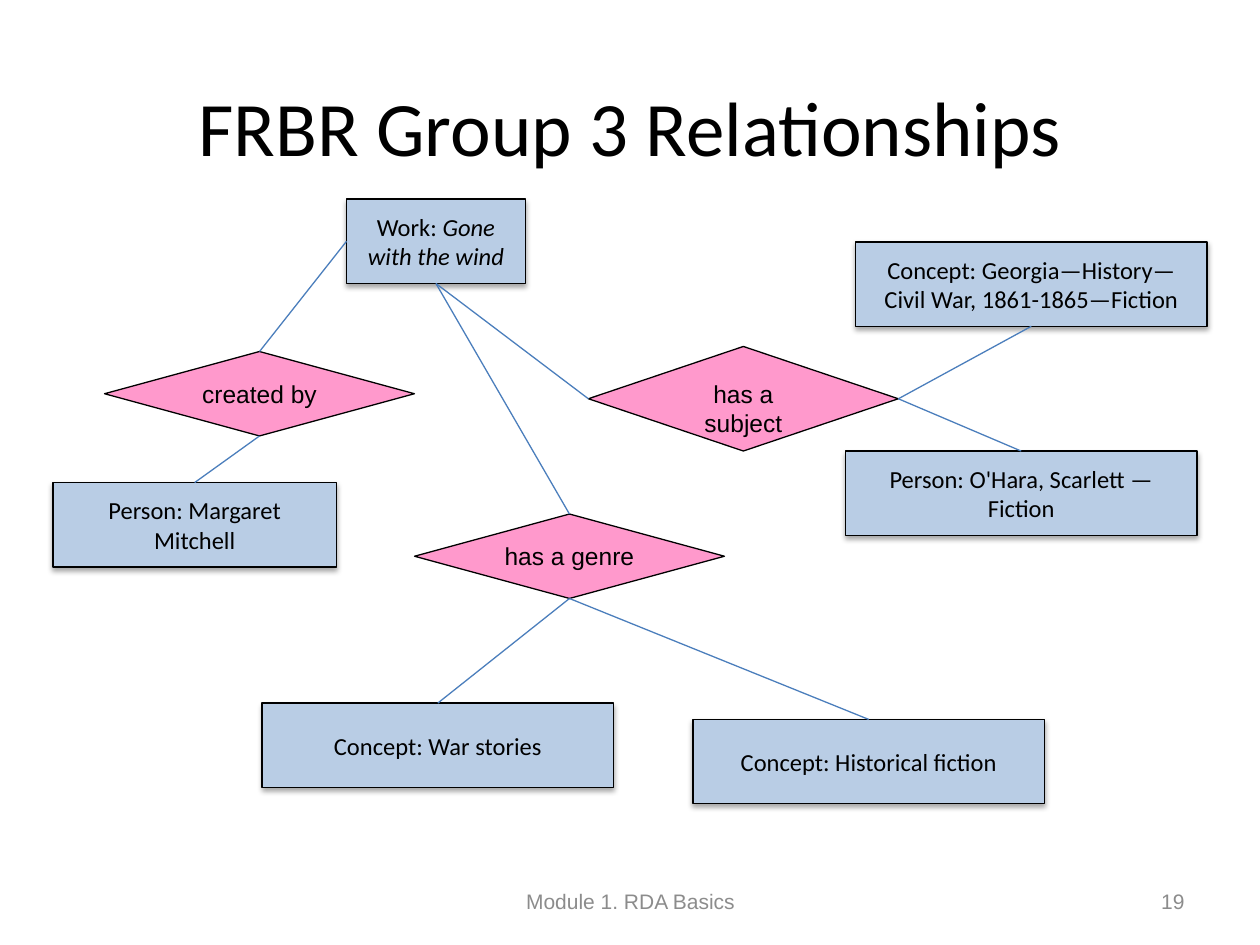
from lxml import etree
from pptx import Presentation
from pptx.dml.color import RGBColor
from pptx.enum.shapes import MSO_CONNECTOR, MSO_SHAPE
from pptx.enum.text import MSO_ANCHOR, PP_ALIGN
from pptx.oxml import parse_xml
from pptx.oxml.ns import nsdecls, qn
from pptx.util import Inches, Pt

BLACK = RGBColor(0x00, 0x00, 0x00)
GREY = RGBColor(0x8C, 0x8C, 0x8C)
PINK = RGBColor(0xFF, 0x99, 0xCC)
PALE_BLUE = RGBColor(0xB9, 0xCD, 0xE5)
LINE_BLUE = RGBColor(0x4B, 0x7E, 0xBC)

TOP, LEFT, BOTTOM, RIGHT = range(4)

ENTITIES = {
    "work": ((2.75, 1.58, 1.42, 0.67), ["Work: ", "Gone with the wind"]),
    "author": ((0.42, 3.83, 2.25, 0.67), ["Person: Margaret Mitchell"]),
    "georgia": ((6.79, 1.92, 2.79, 0.67),
                ["Concept: Georgia—History—Civil War, 1861-1865—Fiction"]),
    "scarlett": ((6.71, 3.58, 2.79, 0.67), ["Person: O'Hara, Scarlett —Fiction"]),
    "historical": ((5.5, 5.71, 2.79, 0.67), ["Concept: Historical fiction"]),
    "war": ((2.08, 5.58, 2.79, 0.67), ["Concept: War stories"]),
}
RELATIONS = {
    "subject": ((4.67, 2.75, 2.46, 0.83), "has a subject"),
    "creator": ((0.83, 2.79, 2.46, 0.67), "created by"),
    "genre": ((3.29, 4.08, 2.46, 0.67), "has a genre"),
}
LINKS = [
    ("work", LEFT, "creator", TOP),
    ("creator", BOTTOM, "author", TOP),
    ("work", BOTTOM, "subject", LEFT),
    ("subject", RIGHT, "georgia", BOTTOM),
    ("subject", RIGHT, "scarlett", TOP),
    ("work", BOTTOM, "genre", TOP),
    ("genre", BOTTOM, "historical", TOP),
    ("genre", BOTTOM, "war", TOP),
]


def set_text(s, texts, size, font, color=BLACK, align=PP_ALIGN.CENTER,
             anchor=MSO_ANCHOR.MIDDLE):
    tf = s.text_frame
    tf.word_wrap = True
    tf.vertical_anchor = anchor
    p = tf.paragraphs[0]
    p.alignment = align
    for text in texts:
        r = p.add_run()
        r.text = text
        r.font.size = Pt(size)
        r.font.name = font
        r.font.color.rgb = color
    return p


def add_label(slide, box, text, size, font, color, align=PP_ALIGN.CENTER):
    s = slide.shapes.add_textbox(*map(Inches, box))
    set_text(s, [text], size, font, color, align)


def add_node(slide, box, kind, fill):
    s = slide.shapes.add_shape(kind, *map(Inches, box))
    s.shadow.inherit = False
    s.fill.solid()
    s.fill.fore_color.rgb = fill
    s.line.color.rgb = BLACK
    s.line.width = Pt(0.75)
    return s


def add_shadow(s):
    effects = s._element.spPr.find(qn("a:effectLst"))
    effects.append(parse_xml(
        f'<a:outerShdw {nsdecls("a")} blurRad="{Pt(3.1)}" dist="{Pt(1.8)}" '
        'dir="5400000" rotWithShape="0"><a:srgbClr val="000000">'
        '<a:alpha val="35000"/></a:srgbClr></a:outerShdw>'))


def add_entity(slide, box, texts):
    s = add_node(slide, box, MSO_SHAPE.FLOWCHART_PROCESS, PALE_BLUE)
    add_shadow(s)
    p = set_text(s, texts, 14, "Calibri")
    for r in p.runs[1:]:
        r.font.italic = True
    return s


def add_relation(slide, box, text):
    s = add_node(slide, box, MSO_SHAPE.FLOWCHART_DECISION, PINK)
    set_text(s, [text], 14, "Arial", anchor=MSO_ANCHOR.TOP)
    return s


def add_link(slide, start, start_site, end, end_site):
    line = slide.shapes.add_connector(MSO_CONNECTOR.STRAIGHT, 0, 0, 0, 0)
    line.begin_connect(start, start_site)
    line.end_connect(end, end_site)
    line.line.color.rgb = LINE_BLUE
    line.line.width = Pt(0.75)
    etree.SubElement(line._element.spPr, qn("a:effectLst"))


def add_diagram(slide):
    nodes = {name: add_entity(slide, *entity) for name, entity in ENTITIES.items()}
    for name, relation in RELATIONS.items():
        nodes[name] = add_relation(slide, *relation)
    for start, start_site, end, end_site in LINKS:
        add_link(slide, nodes[start], start_site, nodes[end], end_site)


def main():
    prs = Presentation()
    prs.slide_width = Inches(10)
    prs.slide_height = Inches(7.5)
    slide = prs.slides.add_slide(prs.slide_layouts[6])
    add_label(slide, (0.5, 0.25, 9, 1.5), "FRBR Group 3 Relationships",
              44, "Calibri", BLACK)
    add_diagram(slide)
    add_label(slide, (3.42, 6.95, 3.17, 0.4), "Module 1. RDA Basics", 12, "Arial", GREY)
    add_label(slide, (7.17, 6.95, 2.33, 0.4), "19", 12, "Arial", GREY, PP_ALIGN.RIGHT)
    prs.save("out.pptx")


if __name__ == "__main__":
    main()
